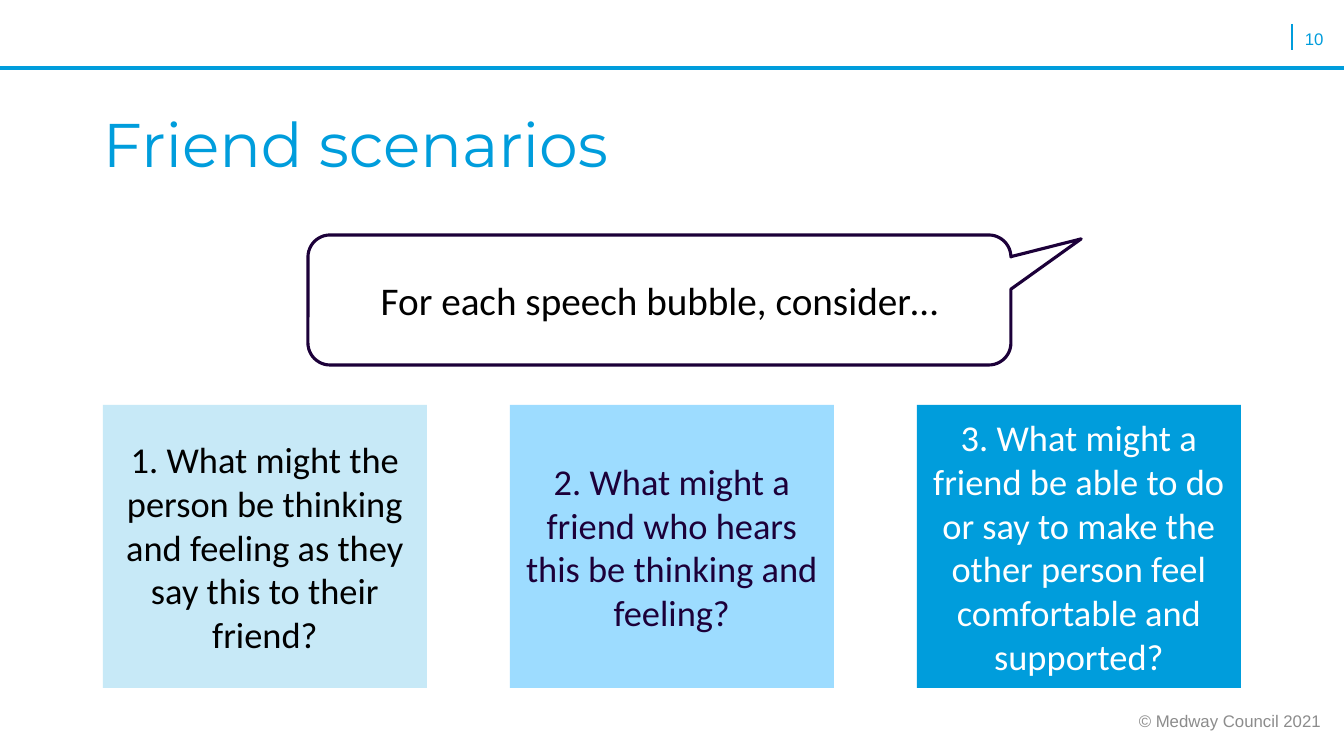
from dataclasses import dataclass

from lxml.etree import SubElement
from pptx import Presentation
from pptx.dml.color import RGBColor
from pptx.enum.shapes import MSO_CONNECTOR as Connector, MSO_SHAPE as Shape
from pptx.enum.text import MSO_ANCHOR as Anchor, PP_ALIGN as Align
from pptx.oxml.ns import qn
from pptx.util import Pt

EMU_PER_PX = 914400 / 100.8


@dataclass(frozen=True)
class Theme:
    blue: str = "009DDC"
    sky: str = "9DDCFF"
    pale: str = "C7E9F7"
    ink: str = "1C0039"
    grey: str = "8C8C8C"
    black: str = "000000"
    white: str = "FFFFFF"
    heading_font: str = "Montserrat"
    body_font: str = "Calibri"
    small_font: str = "Arial"
    title_size: int = 44
    prompt_size: int = 28
    card_size: int = 26
    small_size: int = 12


def px(*lengths):
    return [round(length * EMU_PER_PX) for length in lengths]


def rgb(code):
    return RGBColor.from_string(code)


class SlideBuilder:
    def __init__(self, slide, theme):
        self.shapes = slide.shapes
        self.theme = theme

    def set_words(self, holder, words, font, size, color, align, anchor):
        frame = holder.text_frame
        frame.text = words
        frame.word_wrap = True
        frame.vertical_anchor = anchor
        paragraph = frame.paragraphs[0]
        paragraph.alignment = align
        style = paragraph.runs[0].font
        style.name, style.size = font, Pt(size)
        style.color.rgb = rgb(color)
        return paragraph

    def rule(self, x1, y1, x2, y2, width):
        line = self.shapes.add_connector(Connector.STRAIGHT, *px(x1, y1, x2, y2))
        line.line.color.rgb = rgb(self.theme.blue)
        line.line.width = Pt(width)
        SubElement(line._element.spPr, qn("a:effectLst"))

    def label(self, box, words, font, size, color, align=Align.LEFT, anchor=Anchor.TOP):
        holder = self.shapes.add_textbox(*px(*box))
        return self.set_words(holder, words, font, size, color, align, anchor)

    def panel(self, kind, box, words, size, color, fill=None, outline=None):
        panel = self.shapes.add_shape(kind, *px(*box))
        panel.shadow.inherit = False
        if fill:
            panel.fill.solid()
            panel.fill.fore_color.rgb = rgb(fill)
        else:
            panel.fill.background()
        if outline:
            panel.line.color.rgb = rgb(outline)
            panel.line.width = Pt(2.25)
        else:
            panel.line.fill.background()
        self.set_words(panel, words, self.theme.body_font, size, color,
                       Align.CENTER, Anchor.MIDDLE)
        return panel


def main():
    deck = Presentation()
    deck.slide_width, deck.slide_height = px(1344, 756)
    theme = Theme()
    page = SlideBuilder(deck.slides.add_slide(deck.slide_layouts[6]), theme)

    # Header and footer
    page.rule(1292, 24, 1292, 50, 1.5)
    page.rule(0, 68, 1344, 68, 2.25)
    page.label((1295, 24, 42, 26), "10", theme.small_font, theme.small_size, theme.blue)
    page.label((1095, 701, 236, 40), "© Medway Council 2021", theme.small_font,
               theme.small_size, theme.grey, Align.RIGHT, Anchor.MIDDLE)

    # Title
    title = page.label((93, 109, 1193, 146), "Friend scenarios", theme.heading_font,
                       theme.title_size, theme.blue)
    title.line_spacing = 0.9

    # Speech bubble
    bubble = page.panel(Shape.ROUNDED_RECTANGULAR_CALLOUT, (308, 235, 703, 130),
                        "For each speech bubble, consider…", theme.prompt_size,
                        theme.black, outline=theme.ink)
    for index, value in enumerate((0.6, -0.47, 0.17)):
        bubble.adjustments[index] = value

    # Question cards
    questions = [
        ("1. What might the person be thinking and feeling as they say this to "
         "their friend?", theme.pale, theme.black),
        ("2. What might a friend who hears this be thinking and feeling?",
         theme.sky, theme.ink),
        ("3. What might a friend be able to do or say to make the other person "
         "feel comfortable and supported?", theme.blue, theme.white),
    ]
    card_width, card_gap = 324, 83
    for index, (question, fill, color) in enumerate(questions):
        left = 103 + index * (card_width + card_gap)
        page.panel(Shape.RECTANGLE, (left, 405, card_width, 283), question,
                   theme.card_size, color, fill=fill)

    deck.save("out.pptx")


if __name__ == "__main__":
    main()
